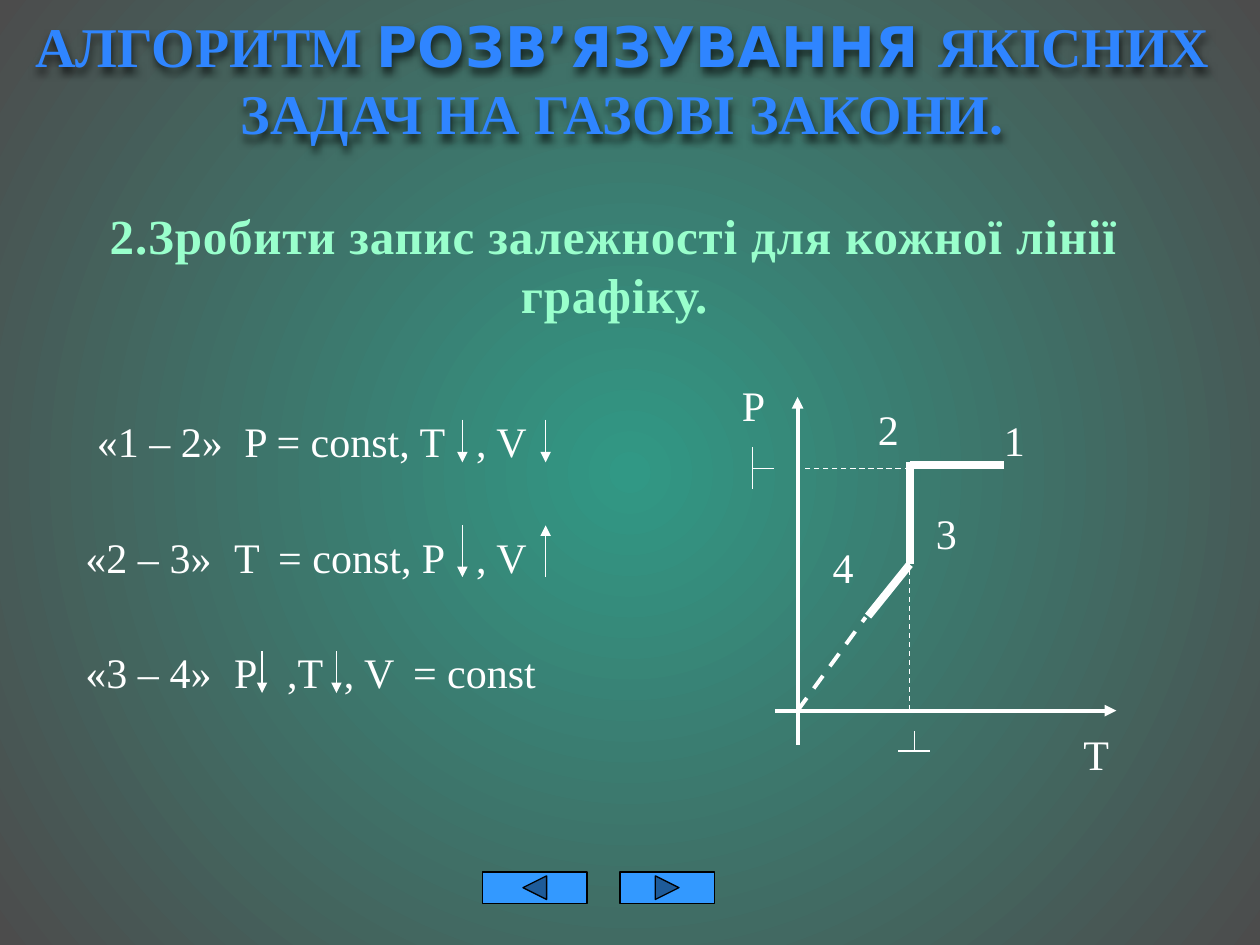
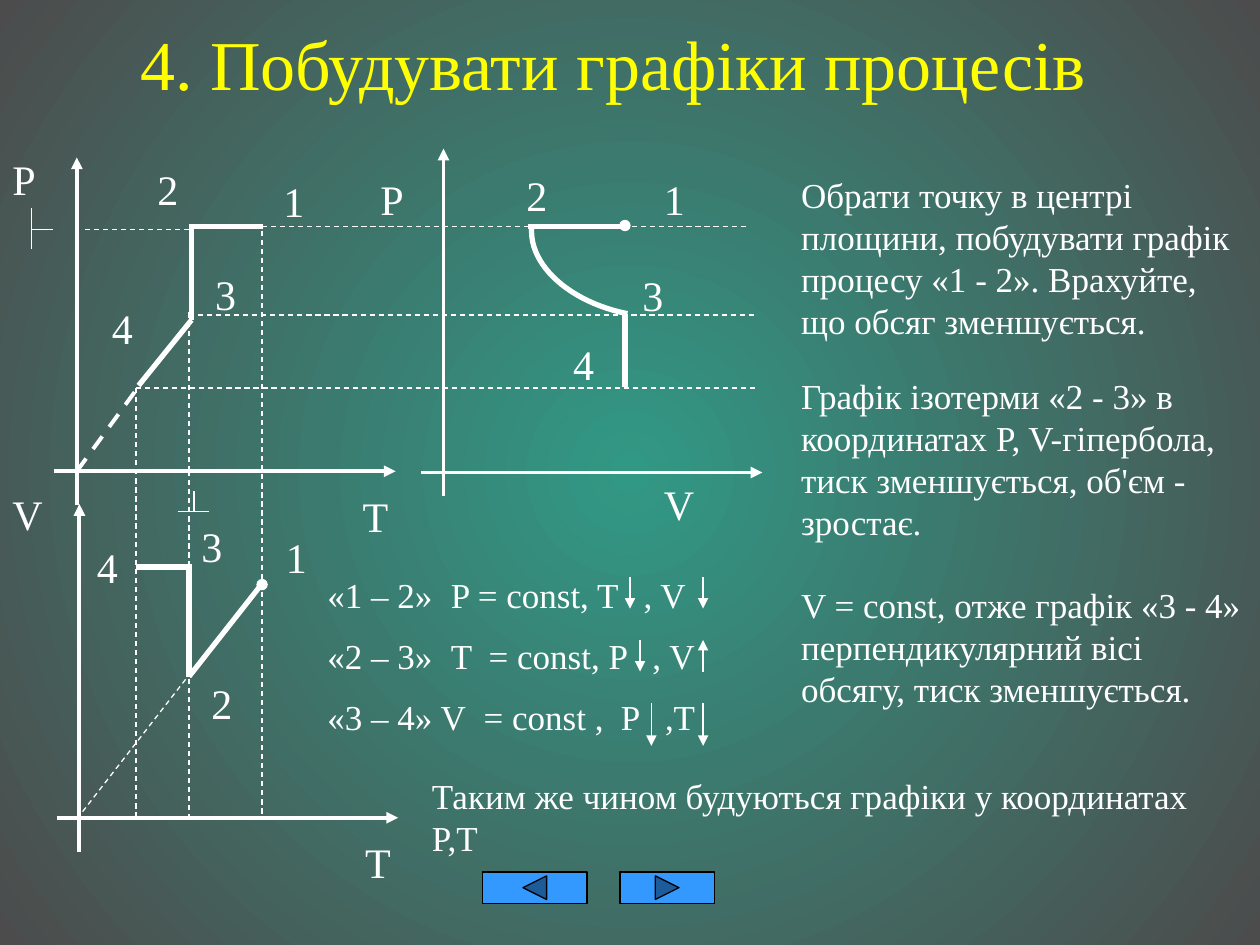
from lxml.etree import SubElement
from pptx import Presentation
from pptx.dml.color import RGBColor
from pptx.enum.dml import MSO_LINE
from pptx.enum.shapes import MSO_CONNECTOR, MSO_SHAPE
from pptx.enum.text import MSO_ANCHOR, MSO_AUTO_SIZE, PP_ALIGN
from pptx.oxml.ns import qn
from pptx.util import Inches, Pt

WHITE = "FFFFFF"
YELLOW = "FFFF00"
TITLE_BLUE = "2F85FF"
MINT = "99FFCC"
BUTTON_BLUE = "3399FF"
BLACK = "000000"
CENTER_GREEN = "319885"
EDGE_GREY = "4C4C4C"
FONT = "Times New Roman"
INSET = 0.1


def color(hex_text):
    """Turn a hex string into a colour."""
    return RGBColor.from_string(hex_text)


def set_background(master):
    """Give every slide the radial green to grey background."""
    fill = master.background.fill
    fill.gradient()
    for stop, hex_text in zip(fill.gradient_stops, (CENTER_GREEN, EDGE_GREY)):
        stop.color.rgb = color(hex_text)
    gradient = master.element.find(".//" + qn("p:bgPr") + "/" + qn("a:gradFill"))
    gradient.remove(gradient.find(qn("a:lin")))
    circle = SubElement(gradient, qn("a:path"), {"path": "circle"})
    sides = {side: "50000" for side in "ltrb"}
    SubElement(circle, qn("a:fillToRect"), sides)


def write(para, text, size=24, fill=WHITE, font=FONT, bold=False, align=None,
          before=0, spacing=0, tabs=()):
    """Add a formatted span to a paragraph."""
    para.alignment = align
    para.space_before = Pt(before)
    span = para.add_run()
    span.text = text
    span.font.size = Pt(size)
    span.font.name = font
    span.font.bold = bold
    span.font.color.rgb = color(fill)
    if spacing:
        span.font._element.set("spc", str(spacing))
    if tabs:
        tab_list = SubElement(para._p.get_or_add_pPr(), qn("a:tabLst"))
        for tab in tabs:
            SubElement(tab_list, qn("a:tab"), {"pos": str(Inches(tab)), "algn": "l"})


def add_text(page, text, left, top, width=0.5, height=0.5, **style):
    """Add a wrapping text box with one paragraph."""
    box = page.shapes.add_textbox(Inches(left), Inches(top), Inches(width), Inches(height))
    box.text_frame.word_wrap = True
    write(box.text_frame.paragraphs[0], text, **style)
    return box


def add_labels(page, labels):
    """Place short labels given as text, left and top."""
    for text, left, top in labels:
        add_text(page, text, left, top)


def place_title(page, left, top, width, height, anchor):
    """Move the title placeholder and return its first paragraph."""
    title = page.shapes.title
    title.left, title.top = Inches(left), Inches(top)
    title.width, title.height = Inches(width), Inches(height)
    title.text_frame.auto_size = MSO_AUTO_SIZE.NONE
    title.text_frame.word_wrap = True
    title.text_frame.vertical_anchor = anchor
    return title.text_frame.paragraphs[0]


def add_title_shadow(page):
    """Put a soft dark shadow behind the title."""
    effects = SubElement(page.shapes.title._element.spPr, qn("a:effectLst"))
    shadow = SubElement(effects, qn("a:outerShdw"), {
        "blurRad": str(Inches(0.06)), "dist": str(Inches(0.04)),
        "dir": "5400000", "algn": "tl", "rotWithShape": "0"})
    black = SubElement(shadow, qn("a:srgbClr"), {"val": BLACK})
    SubElement(black, qn("a:alpha"), {"val": "65000"})


def add_line(page, start, end, width=0.75, dashed=False, arrow=False):
    """Draw a straight white line between two points."""
    points = [Inches(value) for value in (*start, *end)]
    connector = page.shapes.add_connector(MSO_CONNECTOR.STRAIGHT, *points)
    connector.line.color.rgb = color(WHITE)
    connector.line.width = Pt(width)
    if dashed:
        connector.line.dash_style = MSO_LINE.DASH
    if arrow:
        SubElement(connector.line._get_or_add_ln(), qn("a:tailEnd"), {"type": "triangle"})
    SubElement(connector._element.spPr, qn("a:effectLst"))


def add_process(page, points, width):
    """Draw the thick segments of a process through its points."""
    for start, end in zip(points, points[1:]):
        add_line(page, start, end, width)


def add_trends(page, trends):
    """Draw vertical arrows given as x, start and end."""
    for x, start, end in trends:
        add_line(page, (x, start), (x, end), arrow=True)


def add_axes(page, x, y, drop=0.27):
    """Draw the two axes that cross at the origin."""
    add_line(page, (x, y + drop), (x, y + drop - 2.76), 2.25, arrow=True)
    add_line(page, (x - 0.18, y), (x + 2.53, y), 2.25, arrow=True)


def add_pressure_graph(page, x, y):
    """Draw axes, guides, ticks and point numbers of the P, T graph."""
    add_axes(page, x, y)
    add_line(page, (x, y), (x + 0.54, y - 0.74), 2.25, dashed=True)
    add_line(page, (x + 0.89, y - 1.92), (x + 0.05, y - 1.92), dashed=True)
    add_line(page, (x + 0.89, y - 1.26), (x + 0.89, y), dashed=True)
    add_line(page, (x + 0.93, y + 0.16), (x + 0.93, y + 0.32))
    add_line(page, (x + 0.8, y + 0.32), (x + 1.05, y + 0.32))
    add_line(page, (x - 0.36, y - 2.09), (x - 0.36, y - 1.76))
    add_line(page, (x - 0.36, y - 1.92), (x - 0.19, y - 1.92))
    add_labels(page, [("1", x + 1.54, y - 2.4), ("2", x + 0.54, y - 2.49),
                      ("3", x + 1, y - 1.66), ("4", x + 0.18, y - 1.39)])


def add_shape(page, kind, left, top, width, height, fill, line):
    """Add a filled preset shape with a thin outline."""
    shape = page.shapes.add_shape(kind, Inches(left), Inches(top), Inches(width), Inches(height))
    shape.shadow.inherit = False
    shape.fill.solid()
    shape.fill.fore_color.rgb = color(fill)
    shape.line.color.rgb = color(line)
    shape.line.width = Pt(0.75)


def add_dot(page, left, top):
    """Mark a starting point with a small white dot."""
    add_shape(page, MSO_SHAPE.OVAL, left, top, 0.08, 0.08, WHITE, WHITE)


def add_buttons(page):
    """Add the back and forward buttons."""
    for kind, left, width in ((MSO_SHAPE.ACTION_BUTTON_BACK_OR_PREVIOUS, 3.83, 0.83),
                              (MSO_SHAPE.ACTION_BUTTON_FORWARD_OR_NEXT, 4.92, 0.75)):
        add_shape(page, kind, left, 6.92, width, 0.25, BUTTON_BLUE, BLACK)


def add_isotherm(page, corners, steps=24):
    """Draw the hyperbola as a smooth curve through four control points."""
    def curve_point(t):
        """Return the curve point at t."""
        weights = ((1 - t) ** 3, 3 * t * (1 - t) ** 2, 3 * t * t * (1 - t), t ** 3)
        return tuple(Inches(sum(weight * corner[axis] for weight, corner in zip(weights, corners)))
                     for axis in (0, 1))

    points = [curve_point(step / steps) for step in range(steps + 1)]
    builder = page.shapes.build_freeform(*points[0])
    builder.add_line_segments(points[1:], close=False)
    curve = builder.convert_to_shape()
    curve.shadow.inherit = False
    curve.fill.background()
    curve.line.color.rgb = color(WHITE)
    curve.line.width = Pt(3)


def build_notation_page(page):
    """Build the slide that notes the dependence for each line."""
    para = place_title(page, 0, 0.04, 9.88, 1.18, MSO_ANCHOR.TOP)
    for text, font in (("АЛГОРИТМ ", FONT), ("РОЗВ’ЯЗУВАННЯ ", "DejaVu Sans"),
                       ("ЯКІСНИХ ЗАДАЧ НА ГАЗОВІ ЗАКОНИ.", FONT)):
        write(para, text, size=32, fill=TITLE_BLUE, font=font, bold=True, align=PP_ALIGN.CENTER)
    add_title_shadow(page)
    add_text(page, "2.Зробити запис залежності для кожної лінії графіку.", 0.5, 1.58, 8.75, 1.04,
             size=28, fill=MINT, bold=True, align=PP_ALIGN.CENTER, spacing=50)

    add_pressure_graph(page, 6.33, 5.64)
    add_labels(page, [("P", 5.79, 2.96), ("T", 8.5, 5.73)])
    add_process(page, [(7.97, 3.69), (7.22, 3.69)], 4.5)
    add_process(page, [(7.22, 3.67), (7.22, 4.48), (6.89, 4.89)], 4.5)

    for text, left, top, stops in (
            ("«1 – 2»\tP = const, T\t, V", 0.67, 3.25, (1.94, 3.78)),
            ("«2 – 3»\tT\t= const, P\t, V", 0.58, 4.17, (1.86, 2.21, 3.78)),
            ("«3 – 4»\tP\t,T\t, V\t= const", 0.58, 5.08, (1.86, 2.28, 2.73, 3.28))):
        add_text(page, text, left, top, 4.25, tabs=[stop - left - INSET for stop in stops])
    add_trends(page, [(3.67, 3.33, 3.67), (4.33, 3.33, 3.67), (3.67, 4.17, 4.58),
                      (4.33, 4.58, 4.17), (2.08, 5.17, 5.5), (2.67, 5.17, 5.5)])
    add_buttons(page)


def build_graphs_page(page):
    """Build the slide with the process graphs in three coordinate systems."""
    para = place_title(page, 0, 0, 9.73, 1, MSO_ANCHOR.MIDDLE)
    write(para, "4. Побудувати графіки процесів", size=40, fill=YELLOW, align=PP_ALIGN.CENTER)

    add_pressure_graph(page, 0.61, 3.74)
    add_process(page, [(2.09, 1.8), (1.5, 1.8)], 3)
    add_process(page, [(1.52, 1.8), (1.52, 2.54), (1.1, 3.06)], 3)
    for x, top, bottom in ((2.08, 1.83, 6.5), (1.5, 3.74, 6.48), (1.08, 3.08, 6.5)):
        add_line(page, (x, top), (x, bottom), dashed=True)
    for left, right, y in ((2.08, 5.92, 1.8), (1.5, 6, 2.5), (1.08, 6, 3.08)):
        add_line(page, (left, y), (right, y), dashed=True)

    add_axes(page, 0.63, 6.49)
    add_line(page, (2.09, 4.6), (0.61, 6.5), dashed=True)
    add_process(page, [(2.09, 4.62), (1.5, 5.37), (1.5, 4.48)], 3)
    add_process(page, [(1.52, 4.5), (1.08, 4.5)], 3)
    add_dot(page, 2.04, 4.6)

    add_axes(page, 3.52, 3.75, drop=0.19)
    add_process(page, [(4.96, 1.8), (4.19, 1.8)], 3)
    add_isotherm(page, [(4.98, 2.49), (4.53, 2.4), (4.2, 2.11), (4.22, 1.81)])
    add_process(page, [(4.96, 2.49), (4.96, 3.07)], 3)
    add_dot(page, 4.92, 1.75)
    add_labels(page, [
        ("P", 0, 1.17), ("T", 2.78, 3.84),
        ("V", 0, 3.83), ("T", 2.8, 6.59), ("1", 2.17, 4.17), ("2", 1.58, 5.33),
        ("3", 1.5, 4.08), ("4", 0.67, 4.25),
        ("P", 2.92, 1.33), ("V", 5.17, 3.75), ("1", 5.17, 1.33), ("2", 4.08, 1.3),
        ("3", 5, 2.09), ("4", 4.45, 2.64)])

    box = add_text(page, "«1 – 2»\tP = const, T\t, V", 2.5, 4.5, 3.17, 1.43,
                   size=20, tabs=(0.98, 2.51))
    for text, tabs in (("«2 – 3»\tT\t= const, P\t, V", (0.98, 1.28, 2.58)),
                       ("«3 – 4» V\t= const ,\tP\t,T", (1.24, 2.33, 2.68))):
        write(box.text_frame.add_paragraph(), text, size=20, before=11, tabs=tabs)
    add_trends(page, [(5, 4.58, 4.83), (5.58, 4.58, 4.83), (5.08, 5.08, 5.33),
                      (5.58, 5.33, 5.08), (5.17, 5.58, 5.92), (5.58, 5.58, 5.92)])

    for text, left, top, width, height in (
            ("Обрати точку в центрі площини, побудувати графік процесу «1 - 2». "
             "Врахуйте, що обсяг зменшується.", 6.26, 1.33, 3.74, 1.45),
            ("Графік ізотерми «2 - 3» в координатах P, V-гіпербола, "
             "тиск зменшується, об'єм - зростає.", 6.26, 2.92, 3.74, 1.45),
            ("V = const, отже графік «3 - 4» перпендикулярний вісі обсягу, "
             "тиск зменшується.", 6.26, 4.58, 3.74, 1.11),
            ("Таким же чином будуються графіки у координатах P,T", 3.33, 6.1, 6.33, 0.77)):
        add_text(page, text, left, top, width, height, size=20)
    add_buttons(page)


def main():
    """Build and save the deck."""
    deck = Presentation()
    deck.slide_width, deck.slide_height = Inches(10), Inches(7.5)
    set_background(deck.slide_master)
    title_only = deck.slide_layouts[5]
    for build_page in (build_notation_page, build_graphs_page):
        build_page(deck.slides.add_slide(title_only))
    deck.save("out.pptx")


if __name__ == "__main__":
    main()
